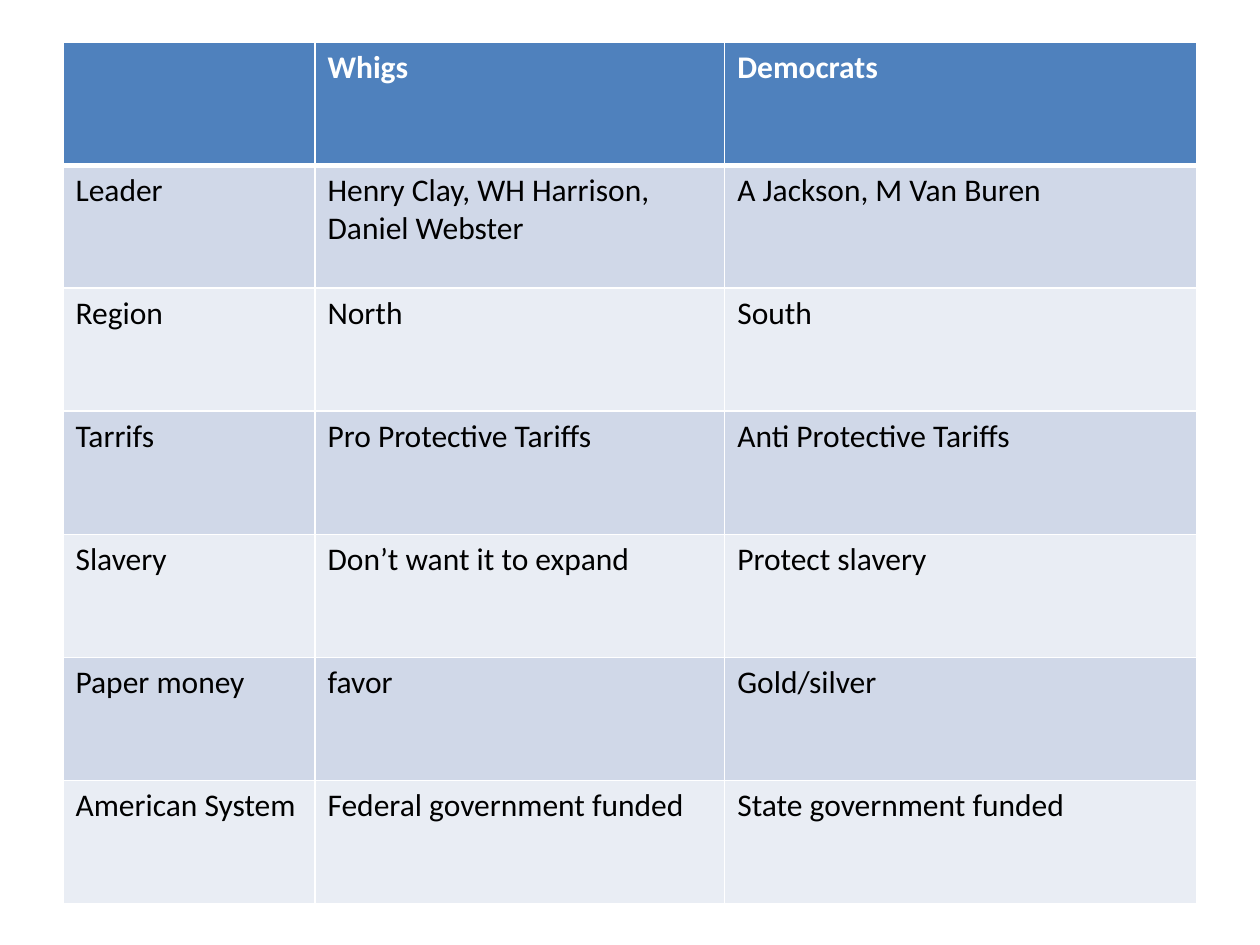
from lxml import etree
from pptx import Presentation
from pptx.dml.color import RGBColor
from pptx.oxml.ns import qn
from pptx.util import Cm, Pt

BLANK_LAYOUT = 6
COLOURS = {
    "header": "4F81BD",
    "odd": "D0D8E8",
    "even": "E9EDF4",
    "border": "FFFFFF",
    "header_text": "FFFFFF",
    "body_text": "000000",
}
COLUMN_WIDTHS = [5.08, 8.26, 9.52]
ROWS = [
    ["", "Whigs", "Democrats"],
    ["Leader", "Henry Clay, WH Harrison, Daniel Webster", "A Jackson, M Van Buren"],
    ["Region", "North", "South"],
    ["Tarrifs", "Pro Protective Tariffs", "Anti Protective Tariffs"],
    ["Slavery", "Don’t want it to expand", "Protect slavery"],
    ["Paper money", "favor", "Gold/silver"],
    ["American System", "Federal government funded", "State government funded"],
]


def colour(name):
    return RGBColor.from_string(COLOURS[name])


def set_borders(cell, widths):
    properties = cell._tc.get_or_add_tcPr()
    for side, width in widths.items():
        line = etree.SubElement(properties, qn(f"a:ln{side}"), w=str(Pt(width)))
        fill = etree.SubElement(line, qn("a:solidFill"))
        etree.SubElement(fill, qn("a:srgbClr"), val=COLOURS["border"])


def format_cell(cell, text, row_index):
    is_header = row_index == 0
    set_borders(cell, {
        "L": 1,
        "R": 1,
        "T": 3 if row_index == 1 else 1,
        "B": 3 if is_header else 1,
    })
    band = "header" if is_header else "odd" if row_index % 2 else "even"
    cell.fill.solid()
    cell.fill.fore_color.rgb = colour(band)
    para = cell.text_frame.paragraphs[0]
    if text:
        para.add_run().text = text
    for span in para.runs:
        for name, value in {"name": "Calibri", "size": Pt(18), "bold": is_header}.items():
            setattr(span.font, name, value)
        span.font.color.rgb = colour("header_text" if is_header else "body_text")


def add_party_table(page, left, top, width, height):
    table = page.shapes.add_table(
        len(ROWS), len(COLUMN_WIDTHS), left, top, width, height
    ).table
    for column, column_width in zip(table.columns, COLUMN_WIDTHS):
        column.width = Cm(column_width)
    for row_index, texts in enumerate(ROWS):
        for cell, text in zip(table.rows[row_index].cells, texts):
            format_cell(cell, text, row_index)


def main():
    deck = Presentation()
    deck.slide_width, deck.slide_height = Cm(25.4), Cm(19.05)
    page = deck.slides.add_slide(deck.slide_layouts[BLANK_LAYOUT])
    add_party_table(page, Cm(1.27), Cm(0.85), Cm(sum(COLUMN_WIDTHS)), Cm(17.36))
    deck.save("out.pptx")


if __name__ == "__main__":
    main()
